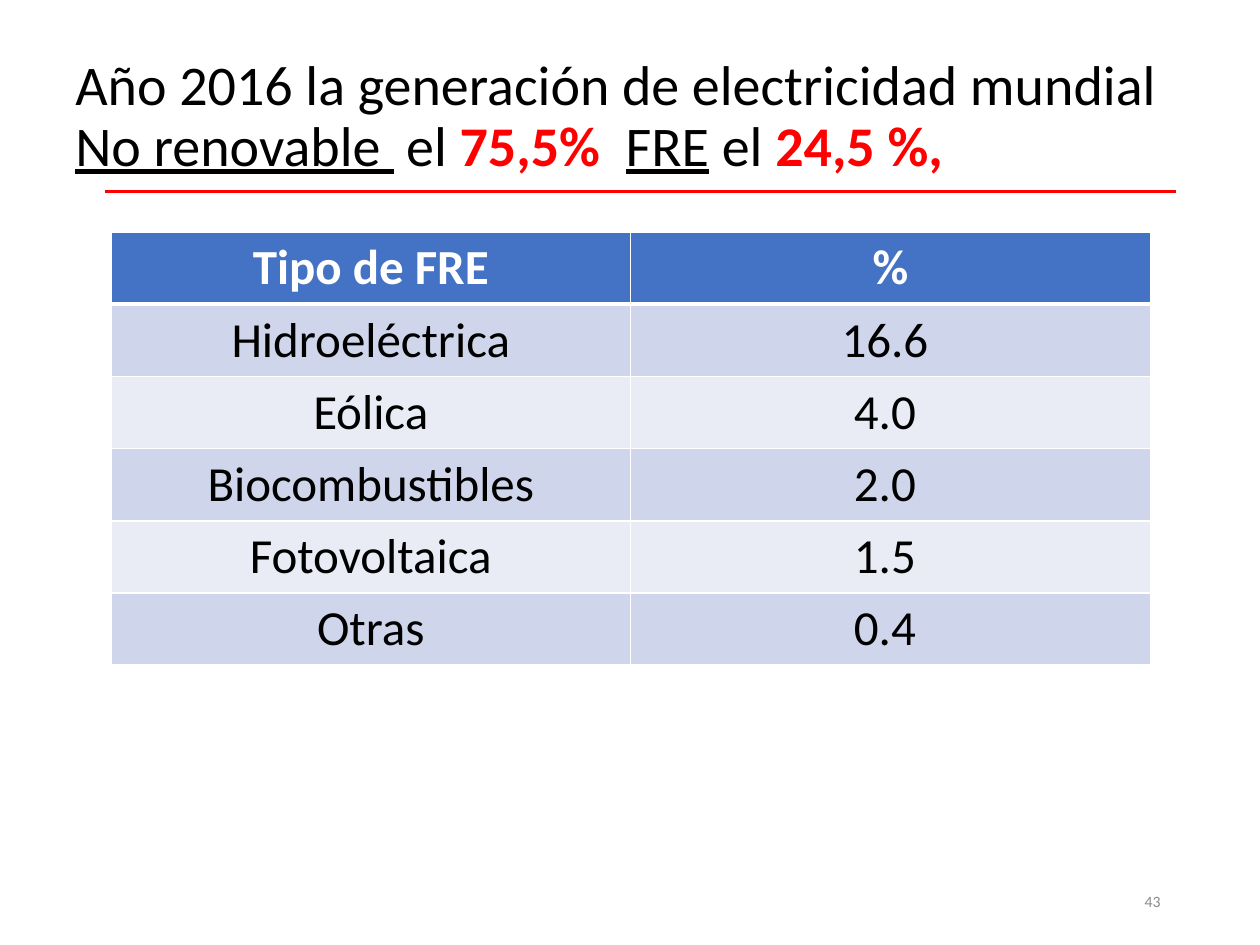
from lxml import etree
from pptx import Presentation
from pptx import util as u
from pptx.dml.color import RGBColor
from pptx.enum import shapes, text
from pptx.oxml import ns

BLACK, WHITE, RED, GREY = "000000", "FFFFFF", "FF0000", "8C8C8C"
HEAD, BANDS = "4472C4", ("CFD5EA", "E9EBF5")
TITLE = [
    [("Año 2016 la generación de electricidad mundial ", "")],
    [("No renovable ", "line"), (" el ", ""), ("75,5%  ", "key"),
     ("FRE", "line"), (" el ", ""), ("24,5 %,", "key")],
]
ROWS = [
    ("Tipo de FRE", "%"),
    ("Hidroeléctrica", "16.6 "),
    ("Eólica", "4.0 "),
    ("Biocombustibles", "2.0 "),
    ("Fotovoltaica", "1.5 "),
    ("Otras", "0.4 "),
]
WIDE, HIGH = 8.25, 3.44


def rgb(code):
    return RGBColor.from_string(code)


def style(font, size, color, bold=False):
    font.name, font.size, font.bold = "Calibri", u.Pt(size), bold
    font.color.rgb = rgb(color)


def add_box(slide, *place):
    frame = slide.shapes.add_textbox(*map(u.Inches, place)).text_frame
    frame.word_wrap = True
    frame.vertical_anchor = text.MSO_ANCHOR.MIDDLE
    return frame.paragraphs[0]


def add_title(slide):
    para = add_box(slide, 0.5, 0.35, 9, 1.17)
    para.line_spacing = 0.9
    for row, parts in enumerate(TITLE):
        if row:
            para.add_line_break()
        for words, kind in parts:
            run = para.add_run()
            run.text = words
            style(run.font, 32, RED if kind == "key" else BLACK, kind == "key")
            run.font.underline = kind == "line"
    style(para.font, 32, BLACK)


def add_edge(cell, side, width):
    props = cell._tc.get_or_add_tcPr()
    edge = etree.SubElement(props, ns.qn("a:ln" + side), w=str(u.Pt(width)))
    fill = etree.SubElement(edge, ns.qn("a:solidFill"))
    etree.SubElement(fill, ns.qn("a:srgbClr"), val=WHITE)


def add_grid(slide):
    count, cols = len(ROWS), len(ROWS[0])
    grid = slide.shapes.add_table(
        count, cols, *map(u.Inches, (0.88, 1.84, WIDE, HIGH))).table
    for col in grid.columns:
        col.width = u.Inches(WIDE / cols)
    for r, words in enumerate(ROWS):
        grid.rows[r].height = u.Inches(HIGH / count)
        for c, word in enumerate(words):
            cell = grid.cell(r, c)
            cell.text = word
            para = cell.text_frame.paragraphs[0]
            para.alignment = text.PP_ALIGN.CENTER
            style(para.font, 28, BLACK if r else WHITE, r == 0)
            for side in "LRTB":
                thick = (r, side) in ((0, "B"), (1, "T"))
                add_edge(cell, side, 3 if thick else 1)
            cell.fill.solid()
            cell.fill.fore_color.rgb = rgb(BANDS[(r - 1) % 2] if r else HEAD)


def add_rule(slide):
    rule = slide.shapes.add_connector(
        shapes.MSO_CONNECTOR.STRAIGHT,
        *map(u.Inches, (0.83, 1.52, 9.33, 1.52)))
    rule.line.color.rgb = rgb(RED)
    rule.line.width = u.Pt(2.25)
    etree.SubElement(rule._element.spPr, ns.qn("a:effectLst"))


def main():
    deck = Presentation()
    deck.slide_width, deck.slide_height = u.Inches(10), u.Inches(7.5)
    slide = deck.slides.add_slide(deck.slide_layouts[6])
    add_title(slide)
    page = add_box(slide, 7.06, 6.95, 2.25, 0.4)
    page.text = "43"
    page.alignment = text.PP_ALIGN.RIGHT
    style(page.font, 9, GREY)
    add_grid(slide)
    add_rule(slide)
    deck.save("out.pptx")


if __name__ == "__main__":
    main()
